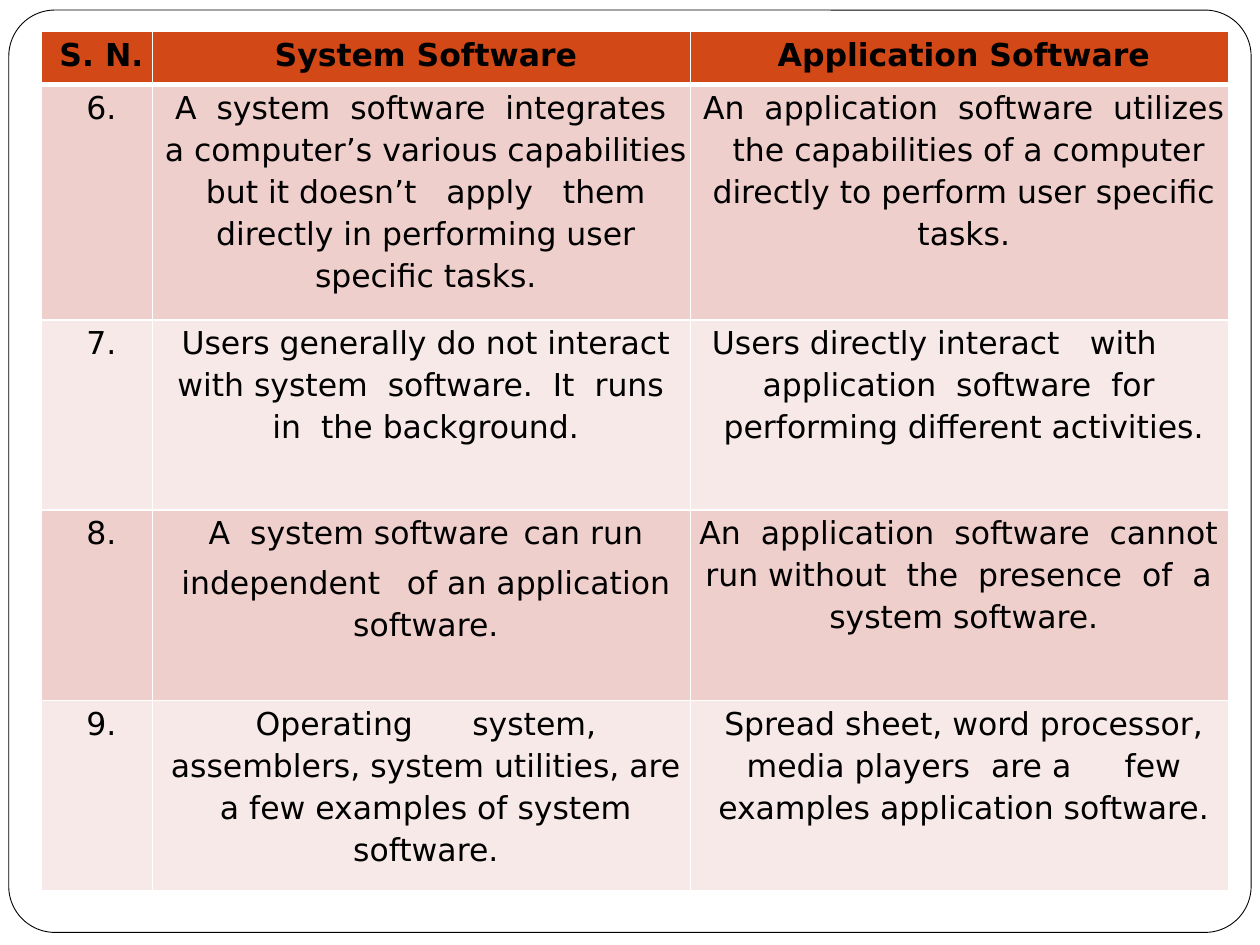
import lxml.etree
import pptx
import pptx.dml.color
import pptx.enum.shapes
import pptx.enum.text
import pptx.oxml.ns
import pptx.util

Inches = pptx.util.Inches
Pt = pptx.util.Pt
qn = pptx.oxml.ns.qn


class Theme:
    """Colours, type sizes and text formats."""
    white, black = "FFFFFF", "000000"
    head = "D34817"
    bands = ("EFCFCC", "F7E9E8")
    edge, rule, thick = Pt(0.5), Pt(1), Pt(3)
    para = {"alignment": pptx.enum.text.PP_ALIGN.CENTER,
            "line_spacing": 1.15, "space_before": Pt(4.6)}
    font = {"name": "DejaVu Sans", "size": Pt(18)}
    cell = {"margin_left": 0, "margin_right": 0,
            "margin_top": 0, "margin_bottom": 0}
    indent = Inches(0.07)


def apply(item, values):
    for name, value in values.items():
        setattr(item, name, value)


def color(code):
    return pptx.dml.color.RGBColor.from_string(code)


class Page:
    def __init__(self, deck, theme):
        self.theme = theme
        self.slide = deck.slides.add_slide(deck.slide_layouts[6])

    def frame(self, left, top, width, height, curve):
        kind = pptx.enum.shapes.MSO_SHAPE.ROUNDED_RECTANGLE
        shape = self.slide.shapes.add_shape(
            kind, Inches(left), Inches(top), Inches(width), Inches(height))
        shape.adjustments[0] = curve
        shape.shadow.inherit = False
        shape.fill.solid()
        shape.fill.fore_color.rgb = color(self.theme.white)
        shape.line.color.rgb = color(self.theme.black)
        shape.line.width = self.theme.edge

    def table(self, left, top, cols, rows, data):
        table = self.slide.shapes.add_table(
            len(rows), len(cols), Inches(left), Inches(top),
            Inches(sum(cols)), Inches(sum(rows))).table
        table.first_row = table.horz_banding = False
        for col, width in zip(table.columns, cols):
            col.width = Inches(width)
        for row, height in zip(table.rows, rows):
            row.height = Inches(height)
        for r, line in enumerate(data):
            for c, parts in enumerate(line):
                self.cell(table.cell(r, c), parts, r)

    def cell(self, cell, parts, row):
        """Fill one cell; parts is a text or a list of (text, tab stops)."""
        theme = self.theme
        apply(cell, theme.cell)
        for side in "LRTB":
            thick = row == 0 and side == "B" or row == 1 and side == "T"
            self.border(cell, side, theme.thick if thick else theme.rule)
        cell.fill.solid()
        fill = theme.bands[(row - 1) % 2] if row else theme.head
        cell.fill.fore_color.rgb = color(fill)
        if isinstance(parts, str):
            parts = [(parts, ())]
        frame = cell.text_frame
        for i, (text, tabs) in enumerate(parts):
            para = frame.add_paragraph() if i else frame.paragraphs[0]
            self.text(para, text, tabs, bold=row == 0)

    def border(self, cell, side, width):
        props = cell._tc.get_or_add_tcPr()
        line = lxml.etree.SubElement(props, qn("a:ln" + side), w=str(width))
        fill = lxml.etree.SubElement(line, qn("a:solidFill"))
        lxml.etree.SubElement(fill, qn("a:srgbClr"), val=self.theme.white)

    def text(self, para, words, tabs, bold):
        apply(para, self.theme.para)
        props = para._p.get_or_add_pPr()
        props.set("marL", str(self.theme.indent))
        if tabs:
            stops = lxml.etree.SubElement(props, qn("a:tabLst"))
            for pos in tabs:
                lxml.etree.SubElement(stops, qn("a:tab"),
                                      pos=str(Inches(pos)), algn="l")
        run = para.add_run()
        run.text = words
        apply(run.font, self.theme.font)
        run.font.bold = bold
        run.font.color.rgb = color(self.theme.black)


# Wording, with tab stops in inches where a line uses them
DATA = [
    ["S. N.", "System Software", "Application Software"],
    ["6.",
     "A  system  software  integrates  a computer’s various capabilities "
     "but it doesn’t   apply   them directly in performing user specific "
     "tasks.",
     "An  application  software  utilizes  the capabilities of a computer "
     "directly to perform user specific tasks."],
    ["7.",
     "Users generally do not interact with system  software.  It  runs  in  "
     "the background.",
     [("Users directly interact\twith\t application  software  for  "
       "performing different activities.", (0.71, 1.51, 2.35, 2.69))]],
    ["8.",
     [("A\tsystem software\tcan run", (0.33, 1.07, 1.93, 2.38)),
      ("independent\tof an application software.", (1.17, 1.46, 1.79))],
     "An  application  software  cannot  run without  the  presence  of  a  "
     "system software."],
    ["9.",
     [("Operating\tsystem, assemblers, system utilities, are a few examples "
       "of system software.", (0.96, 1.72))],
     [("Spread sheet, word processor, media players\tare a\tfew examples "
       "application software.", (0.81, 1.24, 1.5, 1.94))]],
]


def main():
    deck = pptx.Presentation()
    deck.slide_width, deck.slide_height = Inches(10), Inches(7.5)
    page = Page(deck, Theme())

    # Rounded page border
    page.frame(0.07, 0.08, 9.86, 7.32, curve=0.05)

    # Comparison table
    page.table(0.33, 0.25, cols=[0.88, 4.27, 4.27],
               rows=[0.42, 1.87] + [1.51] * 3, data=DATA)

    deck.save("out.pptx")


if __name__ == "__main__":
    main()
